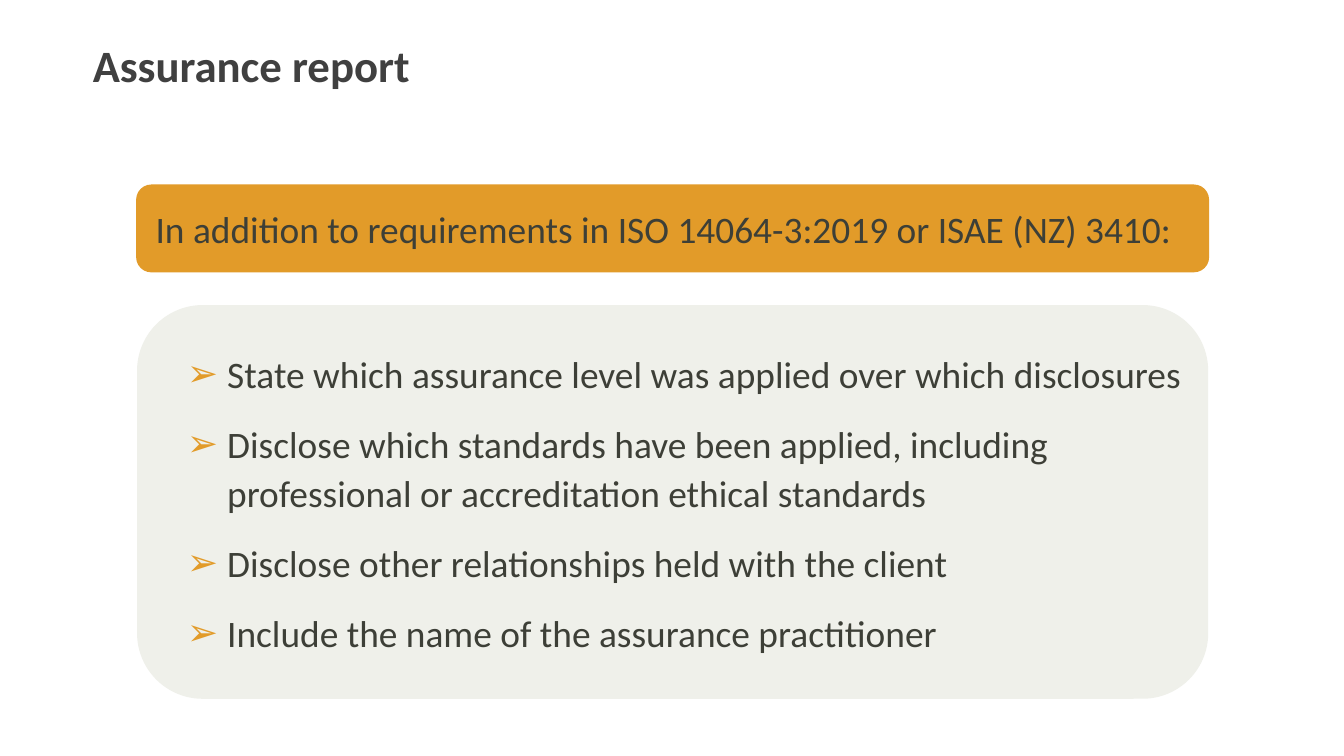
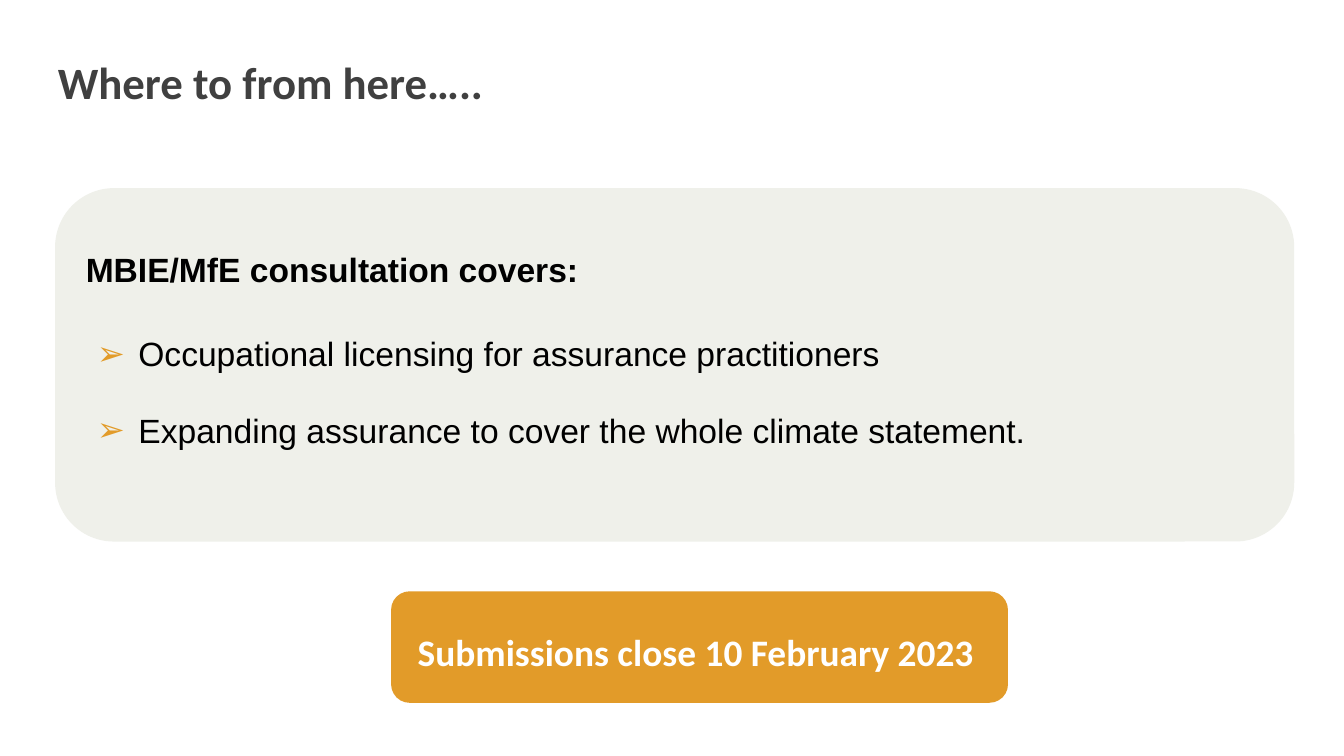
import pptx
import pptx.util
import pptx.dml.color
import pptx.enum.shapes
import pptx.enum.text
import pptx.oxml.ns
import lxml.etree

Inches = pptx.util.Inches
Pt = pptx.util.Pt
RGBColor = pptx.dml.color.RGBColor

GOLD = RGBColor(0xE2, 0x9B, 0x29)
PALE = RGBColor(0xEF, 0xF0, 0xEA)
GRAY = RGBColor(0x40, 0x40, 0x40)
OLIVE = RGBColor(0x3D, 0x3F, 0x37)
BLACK = RGBColor(0, 0, 0)
WHITE = RGBColor(0xFF, 0xFF, 0xFF)

HEAD = {"name": "Calibri", "size": Pt(24), "bold": True}
LARGE = {"name": "Calibri", "size": Pt(20), "bold": False}
PLAIN = {"name": "Arial", "size": Pt(18), "bold": False}
LOOSE = {"line_spacing": 1.1}


def apply(target, values):
    for name, value in values.items():
        setattr(target, name, value)


class Deck:
    def __init__(self):
        self.deck = pptx.Presentation()
        width = Inches(10)
        apply(self.deck, {"slide_width": width, "slide_height": width * 9 // 16})
        self.slide = None

    def start(self):
        self.slide = self.deck.slides.add_slide(self.deck.slide_layouts[1])

    def place(self, holder, box):
        names = ("left", "top", "width", "height")
        apply(holder, dict(zip(names, map(Inches, box))))
        tree = holder.element.getparent()
        tree.append(holder.element)

    def fill(self, shape, lines, font, color, space=None, mark=None):
        frame = shape.text_frame
        apply(frame, {
            "word_wrap": True,
            "auto_size": pptx.enum.text.MSO_AUTO_SIZE.NONE,
            "vertical_anchor": pptx.enum.text.MSO_ANCHOR.TOP,
        })
        for index, line in enumerate(lines):
            para = frame.paragraphs[0] if index == 0 else frame.add_paragraph()
            apply(para, {
                "alignment": pptx.enum.text.PP_ALIGN.LEFT,
                "space_before": Pt(0),
                **(space or {}),
            })
            if mark:
                self.bullet(para, *mark)
            run = para.add_run()
            run.text = line
            apply(run.font, font)
            run.font.color.rgb = color

    def bullet(self, para, margin, hang):
        props = para._p.get_or_add_pPr()
        props.set("marL", str(Inches(margin)))
        props.set("indent", str(-Inches(hang)))
        qn = pptx.oxml.ns.qn
        tint = lxml.etree.SubElement(props, qn("a:buClr"))
        lxml.etree.SubElement(tint, qn("a:srgbClr"), val=str(GOLD))
        lxml.etree.SubElement(props, qn("a:buFont"), typeface="Arial")
        lxml.etree.SubElement(props, qn("a:buChar"), char="➢")

    def title(self, text, box):
        holder = self.slide.shapes.title
        self.place(holder, box)
        self.fill(holder, [text], HEAD, GRAY)

    def list(self, lines, box, font, color, space, mark):
        holder = self.slide.placeholders[1]
        self.place(holder, box)
        self.fill(holder, lines, font, color, space, mark)

    def text(self, text, box, font, color, space=None):
        label = self.slide.shapes.add_textbox(*map(Inches, box))
        self.fill(label, [text], font, color, space)

    def panel(self, box, color, edge=False):
        kind = pptx.enum.shapes.MSO_SHAPE.ROUNDED_RECTANGLE
        shape = self.slide.shapes.add_shape(kind, *map(Inches, box))
        shape.shadow.inherit = False
        shape.fill.solid()
        shape.fill.fore_color.rgb = color
        if edge:
            shape.line.color.rgb = color
            shape.line.width = Pt(1)
        else:
            shape.line.fill.background()


def report(deck):
    deck.start()
    deck.panel((1.02, 1.38, 7.97, 0.64), GOLD, edge=True)
    deck.panel((1.02, 2.27, 7.97, 2.93), PALE)
    deck.title("Assurance report", (0.59, 0.23, 4.64, 0.53))
    deck.text("In addition to requirements in ISO 14064-3:2019 or ISAE (NZ) 3410:",
              (1.06, 1.45, 8.36, 0.57), LARGE, OLIVE, LOOSE)
    deck.list([
        "State which assurance level was applied over which disclosures",
        "Disclose which standards have been applied, including professional or "
        "accreditation ethical standards",
        "Disclose other relationships held with the client",
        "Include the name of the assurance practitioner",
    ], (0.7, 2.53, 8.36, 2.57), LARGE, OLIVE, {**LOOSE, "space_after": Pt(11)}, (0.89, 0.3))


def future(deck):
    deck.start()
    deck.panel((2.91, 4.4, 4.59, 0.83), GOLD)
    deck.panel((0.41, 1.4, 9.22, 2.63), PALE)
    deck.title("Where to from here…..", (0.33, 0.36, 5.16, 0.53))
    deck.text("Submissions close 10 February 2023", (3.01, 4.6, 5.06, 0.55),
              {**LARGE, "bold": True}, WHITE, LOOSE)
    deck.text("MBIE/MfE consultation covers:", (0.54, 1.8, 8.8, 0.4),
              {**PLAIN, "bold": True}, BLACK)
    deck.list([
        "Occupational licensing for assurance practitioners",
        "Expanding assurance to cover the whole climate statement.",
    ], (0.62, 2.43, 8.8, 0.97), PLAIN, BLACK, {"space_after": Pt(19.5)}, (0.31, 0.31))


def main():
    deck = Deck()
    report(deck)
    future(deck)
    deck.deck.save("out.pptx")


if __name__ == "__main__":
    main()
